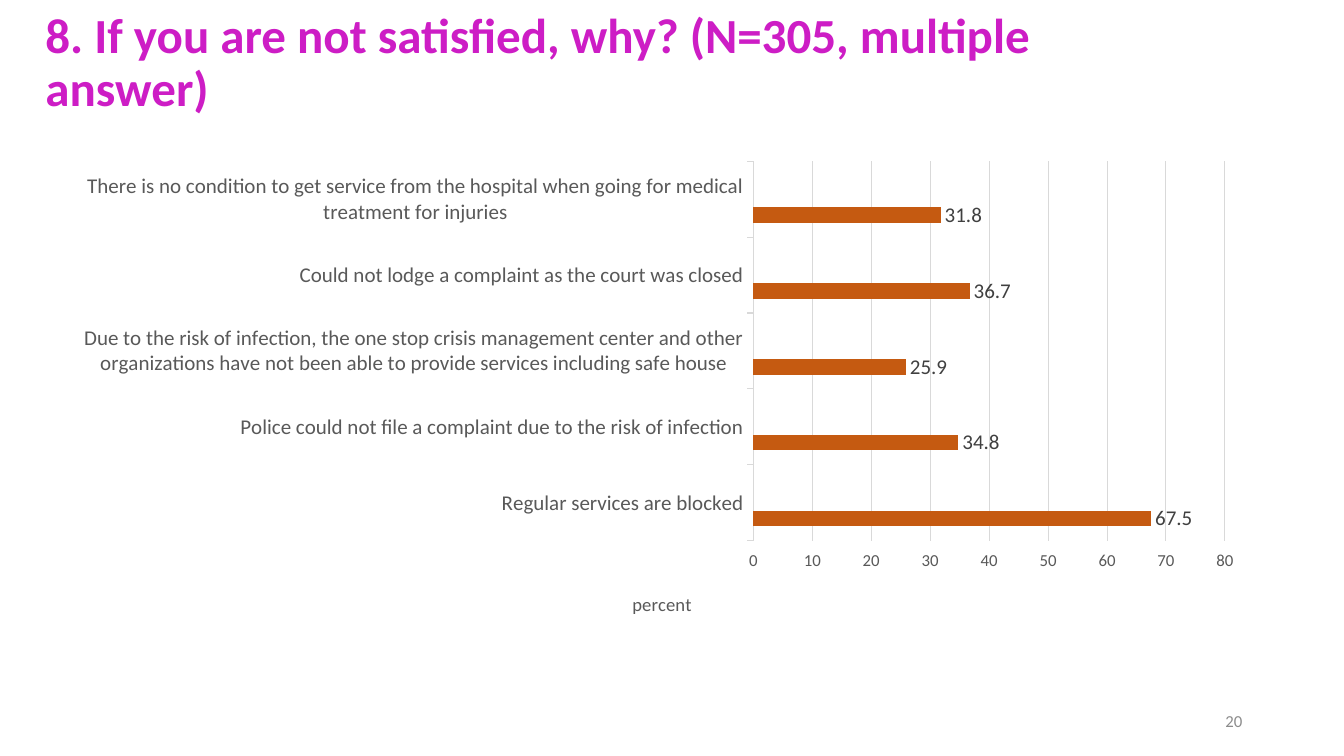
from lxml.etree import SubElement
from pptx import Presentation
from pptx.chart.data import CategoryChartData
from pptx.dml.color import RGBColor
from pptx.enum.chart import XL_CHART_TYPE, XL_LABEL_POSITION, XL_TICK_MARK
from pptx.enum.text import MSO_ANCHOR, MSO_AUTO_SIZE, PP_ALIGN
from pptx.oxml.ns import qn
from pptx.util import Inches, Pt


def style(font, size, color, bold=False):
    font.name = "Calibri"
    font.size = Pt(size)
    font.bold = bold
    font.color.rgb = RGBColor.from_string(color)


def place(element, **settings):
    """Give a plot area or axis title a manual layout, in fractions of the chart."""
    layout = element.find(qn("c:layout"))
    if layout is None:
        layout = SubElement(element, qn("c:layout"))
        # The layout follows the text of a title and comes first in a plot area.
        text = element.find(qn("c:tx"))
        element.insert(0 if text is None else 1, layout)
    manual = SubElement(layout, qn("c:manualLayout"))
    for tag, value in settings.items():
        SubElement(manual, qn(f"c:{tag}")).set("val", str(value))


reasons = {
    "Regular services are blocked": 67.5,
    "Police could not file a complaint due to the risk of infection": 34.8,
    "Due to the risk of infection, the one stop crisis management center and other "
    "organizations have not been able to provide services including safe house": 25.9,
    "Could not lodge a complaint as the court was closed": 36.7,
    "There is no condition to get service from the hospital when going for medical "
    "treatment for injuries": 31.8,
}

presentation = Presentation()
presentation.slide_width = Inches(13.33)
presentation.slide_height = Inches(7.5)
slide = presentation.slides.add_slide(presentation.slide_layouts[5])

# Title
title = slide.shapes.title
title.left, title.top = Inches(0.35), Inches(0.19)
title.width, title.height = Inches(11.5), Inches(0.9)
title.text_frame.text = "8. If you are not satisfied, why? (N=305, multiple answer)"
title.text_frame.vertical_anchor = MSO_ANCHOR.MIDDLE
title.text_frame.auto_size = MSO_AUTO_SIZE.NONE
question = title.text_frame.paragraphs[0]
question.alignment = PP_ALIGN.LEFT
question.line_spacing = 0.9
style(question.runs[0].font, 35, "CD1DC5", bold=True)

# Bar chart; the two empty series keep their room in each category
chart_data = CategoryChartData()
chart_data.categories = list(reasons)
chart_data.add_series("Series 1", list(reasons.values()))
for name in ("Series 2", "Series 3"):
    chart_data.add_series(name, [None] * len(reasons))
chart = slide.shapes.add_chart(
    XL_CHART_TYPE.BAR_CLUSTERED,
    Inches(0.6), Inches(1.5), Inches(11.87), Inches(4.76), chart_data,
).chart
chart.has_title = False
chart.has_legend = False
style(chart.font, 10, "000000")

plot = chart.plots[0]
plot.gap_width = 182
plot.overlap = 0
plot.vary_by_categories = False
for series, color, label_size in zip(
    plot.series, ("C55A11", "ED7D31", "A5A5A5"), (15, 12, 12)
):
    series.format.fill.solid()
    series.format.fill.fore_color.rgb = RGBColor.from_string(color)
    labels = series.data_labels
    labels.show_value = True
    labels.position = XL_LABEL_POSITION.OUTSIDE_END
    style(labels.font, label_size, "404040")

reason_axis, percent_axis = chart.category_axis, chart.value_axis
style(reason_axis.tick_labels.font, 15, "595959")
style(percent_axis.tick_labels.font, 12, "595959")
reason_axis.major_tick_mark = XL_TICK_MARK.OUTSIDE
percent_axis.major_tick_mark = XL_TICK_MARK.OUTSIDE
percent_axis.minimum_scale = 0
percent_axis.maximum_scale = 80
percent_axis.major_unit = 10
percent_axis.format.line.fill.background()
percent_axis.has_major_gridlines = True
for line in (reason_axis.format.line, percent_axis.major_gridlines.format.line):
    line.color.rgb = RGBColor.from_string("D9D9D9")
    line.width = Pt(0.75)

unit = percent_axis.axis_title
unit.text_frame.text = "percent"
style(unit.text_frame.paragraphs[0].runs[0].font, 13.3, "595959")
place(unit.text_frame.paragraphs[0]._p.getparent().getparent().getparent(),
      xMode="edge", yMode="edge", x=0.475, y=0.91)
place(chart._chartSpace.chart.plotArea, layoutTarget="inner",
      xMode="edge", yMode="edge", x=0.579, y=0.021, w=0.394, h=0.791)

# Page number
page_number = slide.shapes.add_textbox(
    Inches(9.42), Inches(6.95), Inches(3), Inches(0.4)
).text_frame
page_number.word_wrap = True
page_number.vertical_anchor = MSO_ANCHOR.MIDDLE
page_number.text = "20"
page_number.paragraphs[0].alignment = PP_ALIGN.RIGHT
style(page_number.paragraphs[0].runs[0].font, 12, "8C8C8C")

presentation.save("out.pptx")
